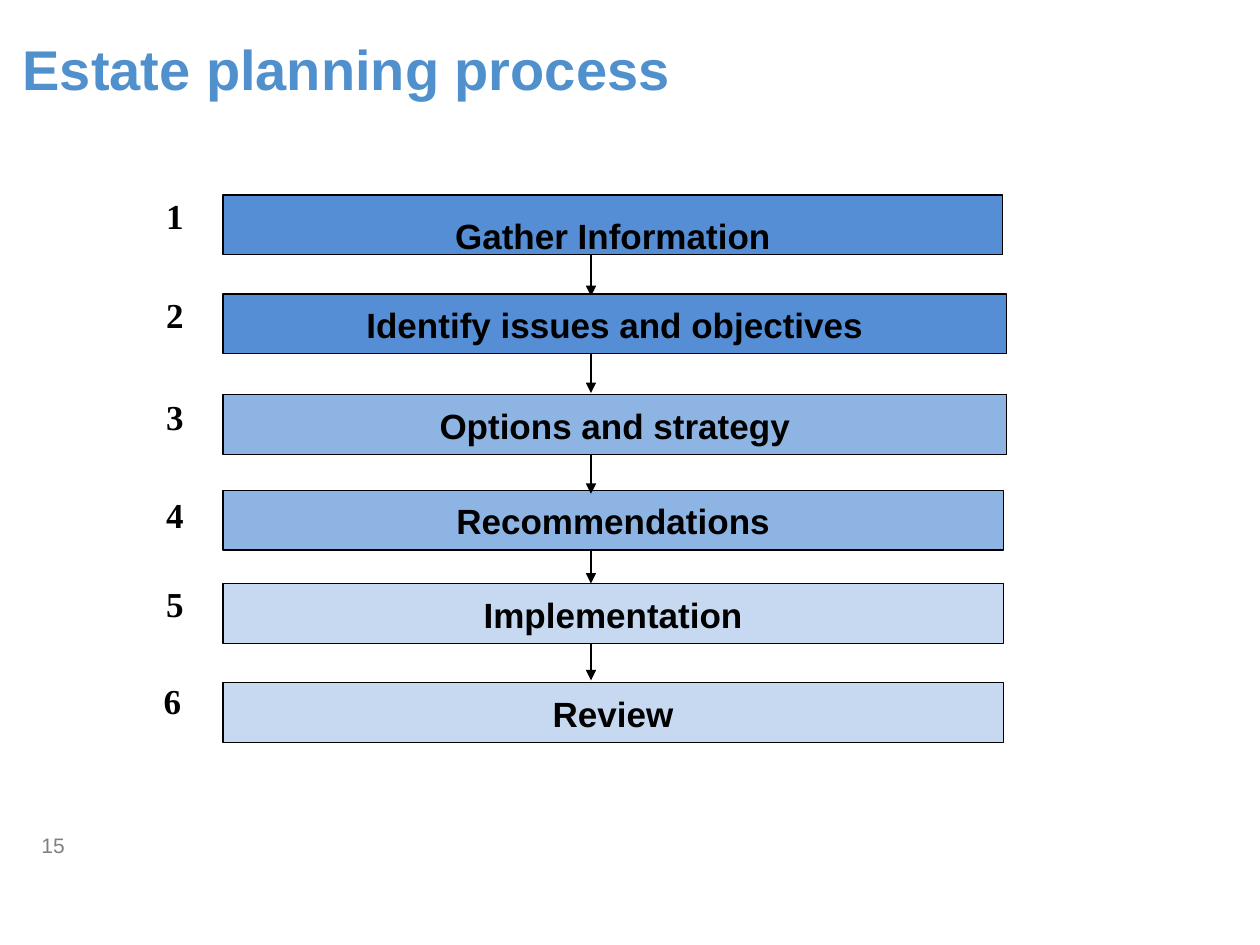
from dataclasses import dataclass

from lxml.etree import SubElement
from pptx import Presentation
from pptx.dml.color import RGBColor
from pptx.enum.shapes import MSO_CONNECTOR as Conn, MSO_SHAPE as Shape
from pptx.enum.text import MSO_ANCHOR as Anchor, PP_ALIGN as Align
from pptx.oxml.ns import qn
from pptx.util import Pt

COLORS = {
    "title": "5091CD",
    "page": "808080",
    "ink": "000000",
    "paper": "FFFFFF",
    "dark": "558ED5",
    "mid": "8EB4E3",
    "light": "C6D9F1",
}
BOX_LEFT = 127.4
BOX_HEIGHT = 34.2
ARROW_X = 337.7
LINE_WIDTH = 0.75


@dataclass
class Step:
    label: str
    top: float
    width: float
    fill: str
    number_top: float
    number_left: float = 87.8
    inset: float = 5.5


@dataclass
class Arrow:
    start: float
    end: float


STEPS = [
    Step("Gather Information", 111.4, 445.7, "dark", 105.8, inset=11),
    Step("Identify issues and objectives", 168, 448, "dark", 162),
    Step("Options and strategy", 225.4, 448, "mid", 220.3),
    Step("Recommendations", 280.1, 446, "mid", 276.5),
    Step("Implementation", 333.4, 446, "light", 327.6),
    Step("Review", 390.2, 446, "light", 383, number_left=86.4),
]
ARROWS_BEHIND = [
    Arrow(131.8, 169.2),
    Arrow(188.6, 224.6),
    Arrow(298.1, 333.4),
    Arrow(352.8, 388.8),
]
ARROW_IN_FRONT = Arrow(259.9, 282.2)


def rgb(name: str) -> RGBColor:
    return RGBColor.from_string(COLORS[name])


def write(s, text: str, size: float, color: str, font: str = "Arial",
          bold: bool = True, align=Align.LEFT, anchor=Anchor.TOP,
          inset: float = 3.6, bottom: float = 3.6) -> None:
    tf = s.text_frame
    tf.word_wrap = True
    tf.vertical_anchor = anchor
    tf.margin_left = tf.margin_right = Pt(7.2)
    tf.margin_top, tf.margin_bottom = Pt(inset), Pt(bottom)
    p = tf.paragraphs[0]
    p.alignment = align
    r = p.add_run()
    r.text = text
    r.font.name, r.font.size, r.font.bold = font, Pt(size), bold
    r.font.color.rgb = rgb(color)


def add_rect(sp, left: float, top: float, width: float, height: float,
             fill: str, outlined: bool):
    s = sp.add_shape(Shape.RECTANGLE, Pt(left), Pt(top), Pt(width), Pt(height))
    s.shadow.inherit = False
    s.fill.solid()
    s.fill.fore_color.rgb = rgb(fill)
    if outlined:
        s.line.color.rgb = rgb("ink")
        s.line.width = Pt(LINE_WIDTH)
    else:
        s.line.fill.background()
    return s


def add_step(sp, number: int, step: Step) -> None:
    s = add_rect(sp, step.number_left, step.number_top, 29.5, 23.8, "paper", False)
    write(s, str(number), 20, "ink", "Times New Roman", inset=5.5, bottom=0)
    s = add_rect(sp, BOX_LEFT, step.top, step.width, BOX_HEIGHT, step.fill, True)
    write(s, step.label, 20, "ink", align=Align.CENTER, inset=step.inset, bottom=0)


def add_arrow(sp, arrow: Arrow) -> None:
    s = sp.add_connector(Conn.STRAIGHT, Pt(ARROW_X), Pt(arrow.start),
                         Pt(ARROW_X), Pt(arrow.end))
    s.line.color.rgb = rgb("ink")
    s.line.width = Pt(LINE_WIDTH)
    SubElement(s.line._get_or_add_ln(), qn("a:tailEnd"), type="triangle")
    SubElement(s._element.spPr, qn("a:effectLst"))


def main() -> None:
    prs = Presentation()
    prs.slide_width, prs.slide_height = Pt(720), Pt(540)
    sp = prs.slides.add_slide(prs.slide_layouts[6]).shapes
    s = sp.add_textbox(Pt(16.6), Pt(472.3), Pt(101.5), Pt(21.6))
    write(s, "15", 12, "page", bold=False)
    s = sp.add_textbox(Pt(5.8), Pt(-5.8), Pt(725.8), Pt(90))
    write(s, "Estate planning process", 32, "title", anchor=Anchor.MIDDLE)
    for arrow in ARROWS_BEHIND:
        add_arrow(sp, arrow)
    for number, step in enumerate(STEPS, 1):
        add_step(sp, number, step)
    add_arrow(sp, ARROW_IN_FRONT)
    prs.save("out.pptx")


if __name__ == "__main__":
    main()
